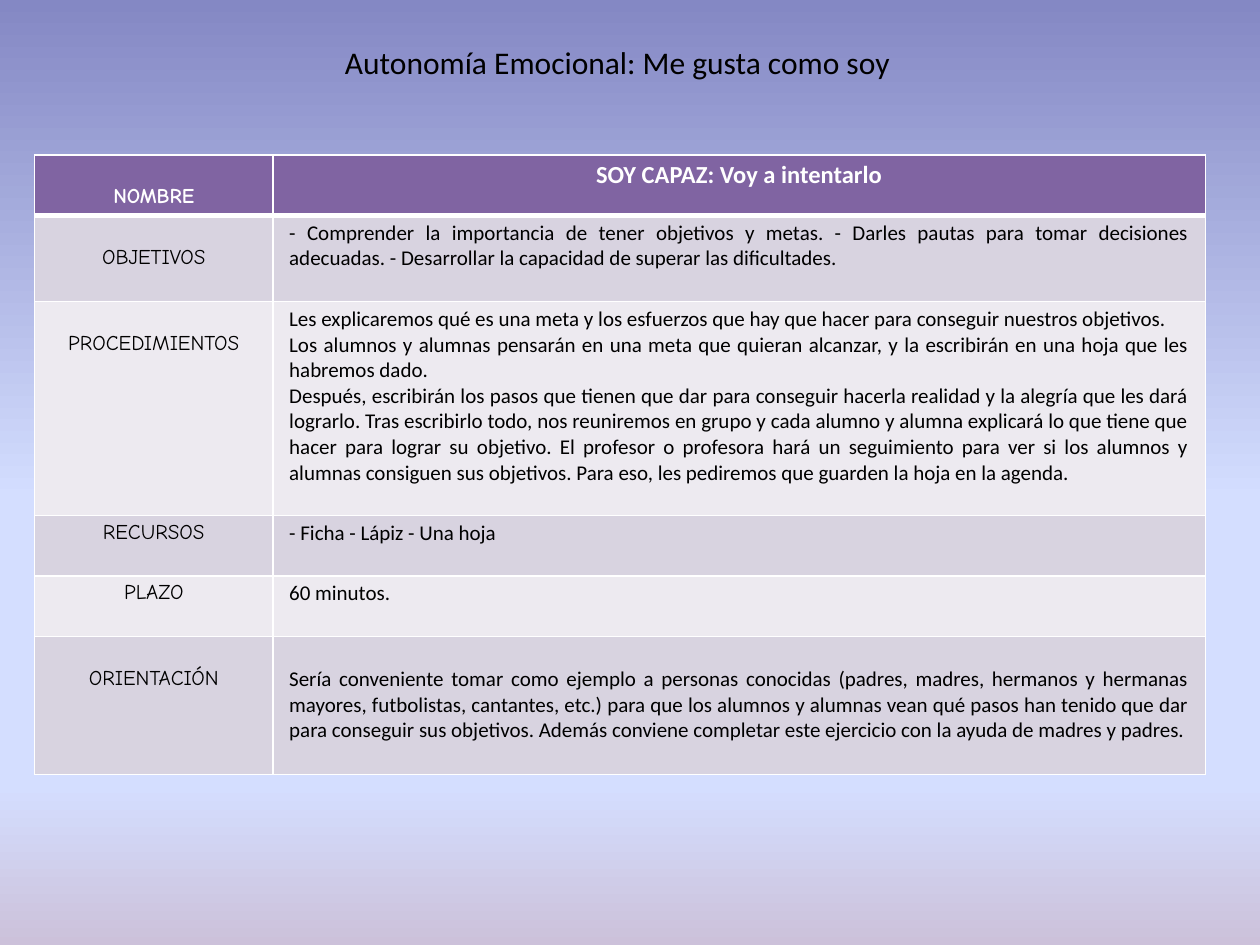
from copy import deepcopy

from lxml.etree import SubElement
from pptx import Presentation
from pptx.dml.color import RGBColor
from pptx.enum.text import MSO_ANCHOR, MSO_AUTO_SIZE, PP_ALIGN as Align
from pptx.oxml.ns import qn
from pptx.util import Cm, Pt

BLACK = RGBColor(0x00, 0x00, 0x00)
WHITE = RGBColor(0xFF, 0xFF, 0xFF)
PURPLE = RGBColor(0x80, 0x64, 0xA2)
LILAC = RGBColor(0xD8, 0xD3, 0xE0)
PALE_LILAC = RGBColor(0xED, 0xEA, 0xF0)
SKY = [
    (0, RGBColor(0x84, 0x88, 0xC4)),
    (0.53, RGBColor(0xD4, 0xDE, 0xFF)),
    (0.83, RGBColor(0xD4, 0xDE, 0xFF)),
    (1, RGBColor(0xCC, 0xC1, 0xDA)),
]

BODY_FONT, LABEL_FONT = "Calibri", "Comic Neue"
COLUMN_WIDTHS = (4.8, 18.8)
TOP, LOWERED = 0.1, 0.61  # top margins: first line, or one line further down

# Label, its top margin, paragraphs, their top margin, row height
ACTIVITY = [
    ("NOMBRE", LOWERED, ["SOY CAPAZ: Voy a intentarlo"], TOP, 1.22),
    ("OBJETIVOS", LOWERED, [
        "- Comprender la importancia de tener objetivos y metas. - Darles pautas "
        "para tomar decisiones adecuadas. - Desarrollar la capacidad de superar "
        "las dificultades.",
    ], TOP, 1.74),
    ("PROCEDIMIENTOS", LOWERED, [
        "Les explicaremos qué es una meta y los esfuerzos que hay que hacer para "
        "conseguir nuestros objetivos.",
        "Los alumnos y alumnas pensarán en una meta que quieran alcanzar, y la "
        "escribirán en una hoja que les habremos dado.",
        "Después, escribirán los pasos que tienen que dar para conseguir hacerla "
        "realidad y la alegría que les dará lograrlo. Tras escribirlo todo, nos "
        "reuniremos en grupo y cada alumno y alumna explicará lo que tiene que "
        "hacer para lograr su objetivo. El profesor o profesora hará un "
        "seguimiento para ver si los alumnos y alumnas consiguen sus objetivos. "
        "Para eso, les pediremos que guarden la hoja en la agenda.",
    ], TOP, 4.31),
    ("RECURSOS", TOP, ["- Ficha - Lápiz - Una hoja"], TOP, 1.22),
    ("PLAZO", TOP, ["60 minutos."], TOP, 1.22),
    ("ORIENTACIÓN", LOWERED, [
        "Sería conveniente tomar como ejemplo a personas conocidas (padres, "
        "madres, hermanos y hermanas mayores, futbolistas, cantantes, etc.) para "
        "que los alumnos y alumnas vean qué pasos han tenido que dar para "
        "conseguir sus objetivos. Además conviene completar este ejercicio con "
        "la ayuda de madres y padres.",
    ], LOWERED, 2.78),
]


def apply_format(target, values):
    for name, value in values.items():
        setattr(target, name, value)


def write(frame, paragraphs, align, color, **font):
    frame.text = "\n".join(paragraphs)
    for paragraph in frame.paragraphs:
        paragraph.alignment = align
        for run in paragraph.runs:
            apply_format(run.font, font)
            run.font.color.rgb = color


def paint_background(slide):
    fill = slide.background.fill
    fill.gradient()
    fill.gradient_angle = 270
    stop_list = next(slide.background._cSld.iter(qn("a:gsLst")))
    while len(stop_list) < len(SKY):
        stop_list.append(deepcopy(stop_list[0]))
    for stop, (position, color) in zip(fill.gradient_stops, SKY):
        stop.position = position
        stop.color.rgb = color


def add_heading(slide, left, top, width, height):
    heading = slide.shapes.title
    box = {"left": left, "top": top, "width": width, "height": height}
    apply_format(heading, {name: Cm(value) for name, value in box.items()})
    frame = heading.text_frame
    write(frame, ["Autonomía Emocional: Me gusta como soy"], Align.LEFT, BLACK,
          name=BODY_FONT, size=Pt(18))
    apply_format(frame, {"vertical_anchor": MSO_ANCHOR.MIDDLE, "word_wrap": True,
                         "auto_size": MSO_AUTO_SIZE.NONE})


def draw_borders(cell, top, bottom):
    properties = cell._tc.get_or_add_tcPr()
    for side, points in (("L", 1), ("R", 1), ("T", top), ("B", bottom)):
        line = SubElement(properties, qn(f"a:ln{side}"), w=str(Pt(points)))
        solid = SubElement(line, qn("a:solidFill"))
        SubElement(solid, qn("a:srgbClr"), val=str(WHITE))


def add_activity_table(slide, left, top):
    heights = [row[-1] for row in ACTIVITY]
    table = slide.shapes.add_table(
        len(ACTIVITY), len(COLUMN_WIDTHS), Cm(left), Cm(top),
        Cm(sum(COLUMN_WIDTHS)), Cm(sum(heights))).table
    for column, width in zip(table.columns, COLUMN_WIDTHS):
        column.width = Cm(width)

    for index, (label, label_top, paragraphs, text_top, height) in enumerate(ACTIVITY):
        table.rows[index].height = Cm(height)
        header = index == 0
        fill = PURPLE if header else LILAC if index % 2 else PALE_LILAC
        color = WHITE if header else BLACK
        label_cell, text_cell = table.rows[index].cells

        # Cell frame: margins, borders, fill
        for cell, margin_top in ((label_cell, label_top), (text_cell, text_top)):
            apply_format(cell, {
                "margin_left": Cm(0.33), "margin_right": Cm(0.33),
                "margin_top": Cm(margin_top), "margin_bottom": Cm(0.1),
                "vertical_anchor": MSO_ANCHOR.TOP})
            draw_borders(cell, top=3 if index == 1 else 1, bottom=3 if header else 1)
            cell.fill.solid()
            cell.fill.fore_color.rgb = fill

        # Label and description
        write(label_cell.text_frame, [label], Align.CENTER, color,
              name=LABEL_FONT, size=Pt(12), bold=header)
        write(text_cell.text_frame, paragraphs,
              Align.CENTER if header else Align.JUSTIFY, color,
              name=BODY_FONT, size=Pt(14 if header else 12), bold=header)


def main():
    deck = Presentation()
    deck.slide_width, deck.slide_height = Cm(25.4), Cm(19.05)
    slide = deck.slides.add_slide(deck.slide_layouts.get_by_name("Title Only"))
    paint_background(slide)
    add_activity_table(slide, 0.7, 3.12)
    add_heading(slide, 6.7, 0.74, 12.4, 1.02)
    deck.save("out.pptx")


if __name__ == "__main__":
    main()
